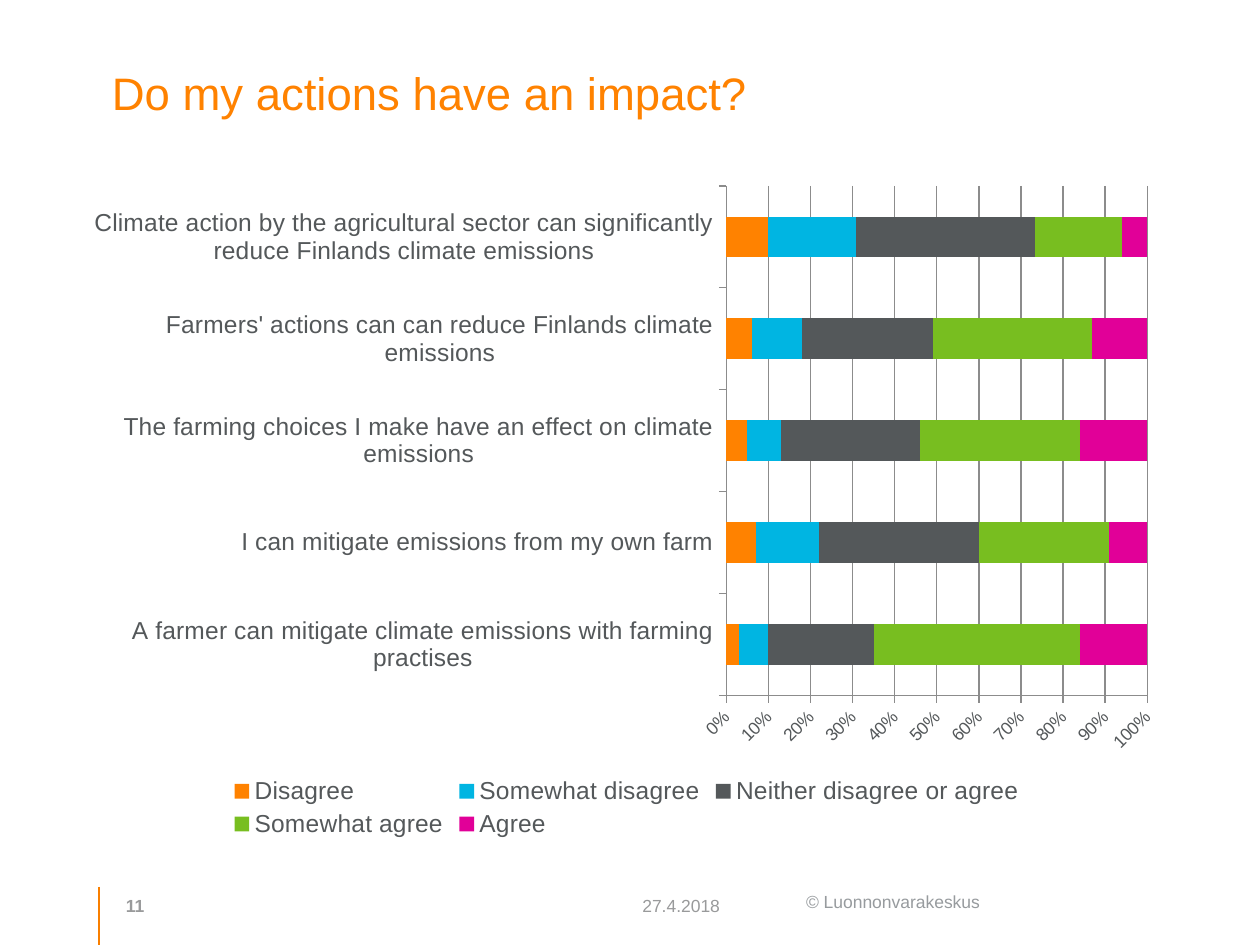
from dataclasses import dataclass

from lxml import etree
from pptx import Presentation
from pptx.chart.data import CategoryChartData
from pptx.dml.color import RGBColor
from pptx.enum.chart import XL_CHART_TYPE, XL_LEGEND_POSITION, XL_TICK_MARK
from pptx.enum.shapes import MSO_CONNECTOR
from pptx.enum.text import MSO_ANCHOR, PP_ALIGN
from pptx.oxml import parse_xml
from pptx.oxml.ns import nsdecls, qn
from pptx.util import Cm, Pt

STACKED = XL_CHART_TYPE.BAR_STACKED_100
BOTTOM_LEGEND = XL_LEGEND_POSITION.BOTTOM
OUTSIDE = XL_TICK_MARK.OUTSIDE
TOP, BOTTOM = MSO_ANCHOR.TOP, MSO_ANCHOR.BOTTOM
LEFT = PP_ALIGN.LEFT
STRAIGHT = MSO_CONNECTOR.STRAIGHT


@dataclass(frozen=True)
class Theme:
    font: str = "Arial"
    title: str = "FF8200"
    text: str = "54585A"
    footer: str = "999A9B"
    copyright: str = "979B9E"
    rule: str = "F97F00"
    grid: str = "8C8C8C"
    title_size: int = 26
    label_size: int = 14
    small_size: int = 10


THEME = Theme()

CATEGORIES = [
    "A farmer can mitigate climate emissions with farming practises",
    "I can mitigate emissions from my own farm",
    "The farming choices I make have an effect on climate emissions",
    "Farmers' actions can can reduce Finlands climate emissions",
    "Climate action by the agricultural sector can significantly reduce Finlands climate emissions",
]
ANSWERS = [
    ("Disagree", "FF8200", (3, 7, 5, 6, 10)),
    ("Somewhat disagree", "00B5E2", (7, 15, 8, 12, 21)),
    ("Neither disagree or agree", "54585A", (25, 38, 33, 31, 43)),
    ("Somewhat agree", "78BE20", (49, 31, 38, 38, 21)),
    ("Agree", "E10098", (16, 9, 16, 13, 6)),
]


def style_font(font, size, color, bold=False):
    font.name = THEME.font
    font.size = Pt(size)
    font.bold = bold
    font.color.rgb = RGBColor.from_string(color)


def set_title(s, text):
    sp = s.shapes.title
    sp.left, sp.top, sp.width, sp.height = Cm(2), Cm(1.19), Cm(20.96), Cm(2.9)
    tf = sp.text_frame
    tf.text = text
    tf.vertical_anchor = TOP
    p = tf.paragraphs[0]
    p.alignment = LEFT
    style_font(p.font, THEME.title_size, THEME.title)


def add_footer_text(s, text, left, width, height, color, anchor=BOTTOM, bold=False):
    sp = s.shapes.add_textbox(Cm(left), Cm(17.83), Cm(width), Cm(height))
    tf = sp.text_frame
    tf.word_wrap = True
    tf.vertical_anchor = anchor
    p = tf.paragraphs[0]
    p.text = text
    style_font(p.font, THEME.small_size, color, bold)


def add_footer_rule(s):
    line = s.shapes.add_connector(STRAIGHT, Cm(2), Cm(17.88), Cm(2), Cm(19.05))
    line.line.color.rgb = RGBColor.from_string(THEME.rule)
    line.line.width = Pt(1)
    etree.SubElement(line._element.spPr, qn("a:effectLst"))


def style_line(line):
    line.color.rgb = RGBColor.from_string(THEME.grid)
    line.width = Pt(0.75)


def style_axis(axis, size):
    axis.major_tick_mark = OUTSIDE
    style_line(axis.format.line)
    style_font(axis.tick_labels.font, size, THEME.text)


def place_plot(chart, x, y, w, h):
    plot_area = chart._chartSpace.chart.plotArea
    for old in plot_area.findall(qn("c:layout")):
        plot_area.remove(old)
    plot_area.insert(0, parse_xml(
        f'<c:layout {nsdecls("c")}><c:manualLayout><c:layoutTarget val="inner"/>'
        '<c:xMode val="edge"/><c:yMode val="edge"/>'
        f'<c:x val="{x}"/><c:y val="{y}"/><c:w val="{w}"/><c:h val="{h}"/>'
        '</c:manualLayout></c:layout>'))


def add_answer_chart(s):
    data = CategoryChartData(number_format="0")
    data.categories = CATEGORIES
    for name, _, values in ANSWERS:
        data.add_series(name, values)
    frame = s.shapes.add_chart(STACKED, Cm(1.47), Cm(3.48), Cm(22.33), Cm(13.51), data)
    chart = frame.chart
    chart.has_title = False
    style_font(chart.font, THEME.small_size, THEME.text)

    plot = chart.plots[0]
    plot.gap_width, plot.overlap = 150, 100
    plot.vary_by_categories = False
    for series, (_, color, _) in zip(plot.series, ANSWERS):
        series.format.fill.solid()
        series.format.fill.fore_color.rgb = RGBColor.from_string(color)

    style_axis(chart.category_axis, THEME.label_size)
    axis = chart.value_axis
    style_axis(axis, THEME.small_size)
    axis.minimum_scale, axis.maximum_scale, axis.major_unit = 0, 1, 0.1
    axis.tick_labels.number_format = "0%"
    axis.tick_labels.number_format_is_linked = False
    axis.has_major_gridlines = True
    style_line(axis.major_gridlines.format.line)
    axis._element.find(qn("c:txPr")).find(qn("a:bodyPr")).set("rot", "-2700000")

    chart.has_legend = True
    chart.legend.position = BOTTOM_LEGEND
    chart.legend.include_in_layout = False
    style_font(chart.legend.font, THEME.label_size, THEME.text)
    place_plot(chart, 0.59, 0.02, 0.38, 0.76)


def main():
    prs = Presentation()
    prs.slide_width, prs.slide_height = Cm(25.4), Cm(19.05)
    s = prs.slides.add_slide(prs.slide_layouts[5])
    add_footer_rule(s)
    add_footer_text(s, "© Luonnonvarakeskus", 16, 4.93, 0.69, THEME.copyright, anchor=TOP)
    set_title(s, "Do my actions have an impact?")
    add_footer_text(s, "11", 2.29, 1.24, 0.76, THEME.footer, bold=True)
    add_footer_text(s, "27.4.2018", 12.7, 3.12, 0.76, THEME.footer)
    add_answer_chart(s)
    prs.save("out.pptx")


if __name__ == "__main__":
    main()
